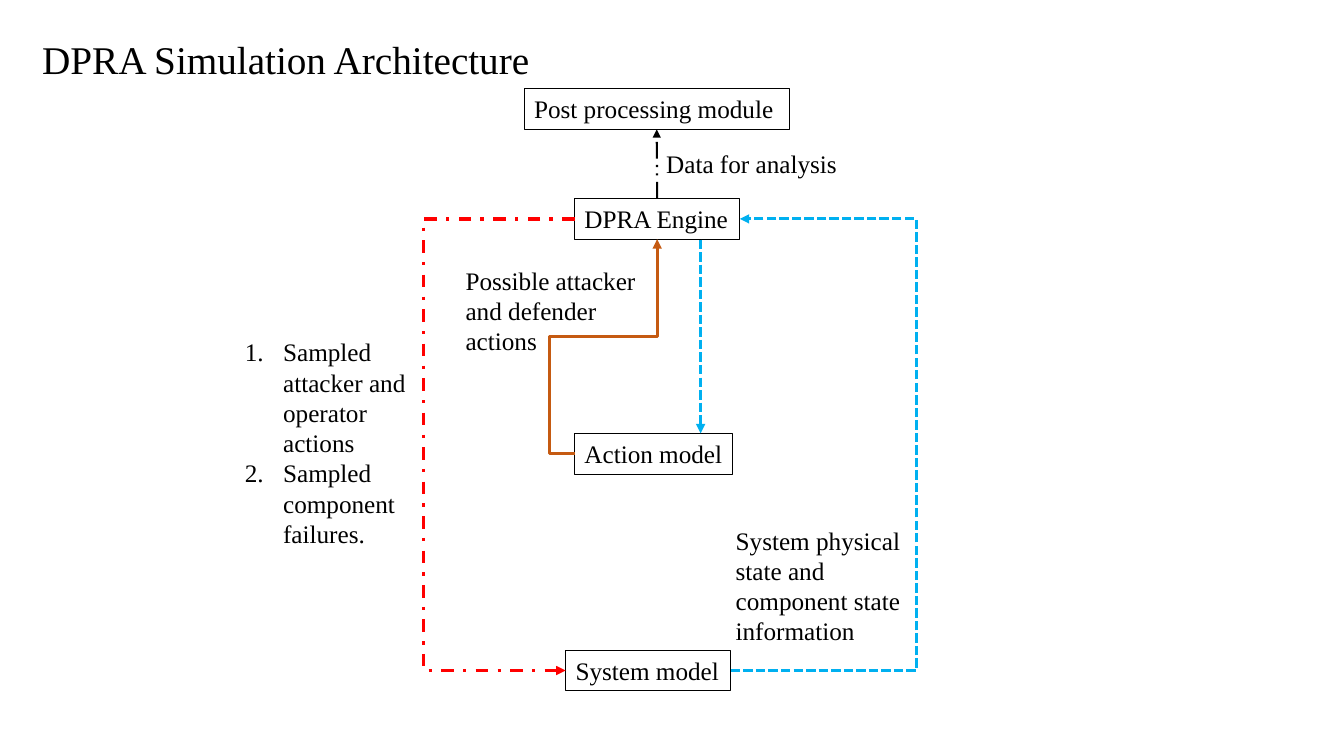
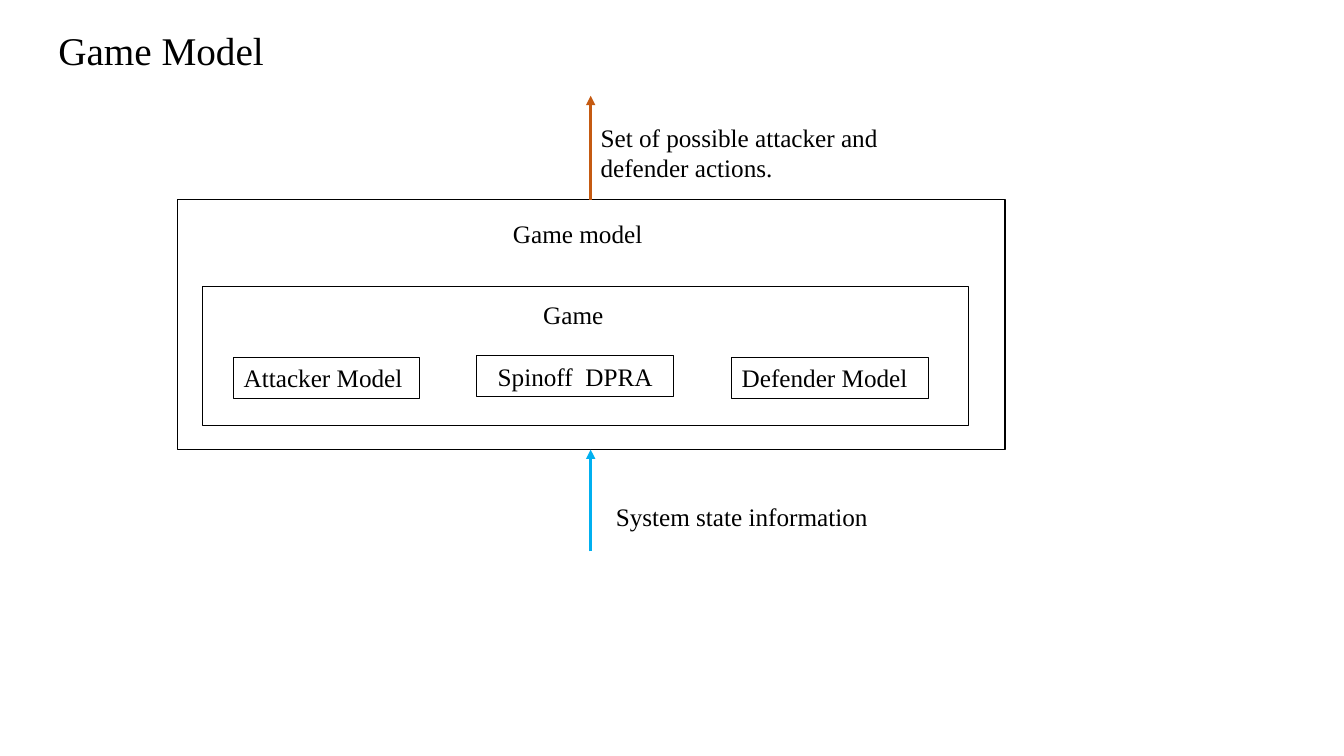
from dataclasses import dataclass
from typing import Optional

import lxml.etree
import pptx
import pptx.dml.color
import pptx.enum.dml
import pptx.enum.shapes
import pptx.enum.text
import pptx.oxml.ns
import pptx.util

Color = pptx.dml.color.RGBColor
Dash = pptx.enum.dml.MSO_LINE
Align = pptx.enum.text.PP_ALIGN
Kind = pptx.enum.shapes.MSO_CONNECTOR


# Theme and grid: 100 columns by 100 rows
@dataclass(frozen=True)
class Theme:
    font: str = "Times New Roman"
    ink: Color = Color(0x00, 0x00, 0x00)
    actions: Color = Color(0xC5, 0x5A, 0x11)
    state: Color = Color(0x00, 0xB0, 0xF0)
    samples: Color = Color(0xFF, 0x00, 0x00)
    title_size: float = 28
    body_size: float = 18
    flow_weight: float = 2.25
    box_weight: float = 0.75
    frame_weight: float = 1


THEME = Theme()
SLIDE_WIDTH = pptx.util.Inches(13.33)
SLIDE_HEIGHT = pptx.util.Inches(7.5)
LINE_ROWS = 5.38  # height of a box holding one line of text
TOP, LEFT, BOTTOM, RIGHT = range(4)  # connection sites of a rectangle


def cols(count: float) -> int:
    return round(SLIDE_WIDTH * count / 100)


def rows(count: float) -> int:
    return round(SLIDE_HEIGHT * count / 100)


# Descriptions of the repeated elements
@dataclass(frozen=True)
class Box:
    """A text area; it is outlined when it has a border weight."""
    col: float
    row: float
    width: float
    text: tuple[str, ...] = ()
    height: float = LINE_ROWS
    border: float = 0
    size: float = THEME.body_size
    wrap: bool = True
    centred: bool = False
    numbered: bool = False


@dataclass(frozen=True)
class Stroke:
    color: Color
    weight: float = THEME.flow_weight
    dash: Optional[Dash] = None


@dataclass(frozen=True)
class Arrow:
    """A straight arrow between two grid points."""
    start: tuple[float, float]
    end: tuple[float, float]
    stroke: Stroke


@dataclass(frozen=True)
class Link:
    """An arrow glued to two boxes, turning at a lane column and row."""
    source: str
    source_site: int
    target: str
    target_site: int
    stroke: Stroke
    lane_col: Optional[float] = None
    lane_row: Optional[float] = None


def title(col: float, row: float, width: float, text: str) -> Box:
    return Box(col, row, width, (text,), 7.6, size=THEME.title_size)


def module(col: float, row: float, width: float, text: str,
           wrap: bool = True, centred: bool = False) -> Box:
    return Box(col, row, width, (text,), border=THEME.box_weight,
               wrap=wrap, centred=centred)


def frame(col: float, row: float, width: float, height: float) -> Box:
    return Box(col, row, width, height=height, border=THEME.frame_weight)


# Drawing
def draw_box(page, box: Box):
    area = (cols(box.col), rows(box.row), cols(box.width), rows(box.height))
    if box.border:
        shape = page.shapes.add_shape(
            pptx.enum.shapes.MSO_SHAPE.RECTANGLE, *area)
        shape.shadow.inherit = False
        shape.fill.background()
        shape.line.color.rgb = THEME.ink
        shape.line.width = pptx.util.Pt(box.border)
    else:
        shape = page.shapes.add_textbox(*area)
    frame_text = shape.text_frame
    frame_text.word_wrap = box.wrap
    frame_text.vertical_anchor = pptx.enum.text.MSO_ANCHOR.TOP
    for index, words in enumerate(box.text):
        para = (frame_text.add_paragraph() if index
                else frame_text.paragraphs[0])
        para.alignment = Align.CENTER if box.centred else Align.LEFT
        if box.numbered:
            number_paragraph(para)
        span = para.add_run()
        span.text = words
        span.font.name = THEME.font
        span.font.size = pptx.util.Pt(box.size)
        span.font.color.rgb = THEME.ink
    return shape


def number_paragraph(para) -> None:
    properties = para._p.get_or_add_pPr()
    indent = pptx.util.Inches(0.38)
    properties.set("marL", str(indent))
    properties.set("indent", str(-indent))
    lxml.etree.SubElement(properties, pptx.oxml.ns.qn("a:buAutoNum"),
                          type="arabicPeriod")


def style_arrow(connector, stroke: Stroke) -> None:
    line = connector.line
    line.color.rgb = stroke.color
    line.width = pptx.util.Pt(stroke.weight)
    if stroke.dash is not None:
        line.dash_style = stroke.dash
    qn = pptx.oxml.ns.qn
    lxml.etree.SubElement(line._get_or_add_ln(), qn("a:tailEnd"),
                          type="triangle")
    lxml.etree.SubElement(connector._element.spPr, qn("a:effectLst"))


def draw_arrow(page, arrow: Arrow) -> None:
    (start_col, start_row), (end_col, end_row) = arrow.start, arrow.end
    connector = page.shapes.add_connector(
        Kind.STRAIGHT, cols(start_col), rows(start_row),
        cols(end_col), rows(end_row))
    style_arrow(connector, arrow.stroke)


def draw_link(page, link: Link, shapes: dict) -> None:
    kind = Kind.STRAIGHT if link.lane_col is None else Kind.ELBOW
    connector = page.shapes.add_connector(kind, 0, 0, 0, 0)
    connector.begin_connect(shapes[link.source], link.source_site)
    connector.end_connect(shapes[link.target], link.target_site)
    if link.lane_col is not None:
        set_lanes(connector, link.lane_col, link.lane_row)
    style_arrow(connector, link.stroke)


def set_lanes(connector, lane_col: float, lane_row: Optional[float]) -> None:
    """Express the turning points as shares of the connector's extent."""
    across = connector.end_x - connector.begin_x
    shares = [(cols(lane_col) - connector.begin_x) / across]
    geometry = connector._element.spPr.find(pptx.oxml.ns.qn("a:prstGeom"))
    if lane_row is not None:
        down = connector.end_y - connector.begin_y
        shares.append((rows(lane_row) - connector.begin_y) / down)
        geometry.set("prst", "bentConnector4")
    guides = geometry.find(pptx.oxml.ns.qn("a:avLst"))
    for index, share in enumerate(shares, 1):
        lxml.etree.SubElement(guides, pptx.oxml.ns.qn("a:gd"),
                              name=f"adj{index}",
                              fmla=f"val {round(share * 100000)}")


def add_page(deck):
    return deck.slides.add_slide(deck.slide_layouts[6])


# Slide 1: modules and the flows between them
STATE_FLOW = Stroke(THEME.state, dash=Dash.SQUARE_DOT)

MODULES = {
    "engine": module(42.75, 26.27, 12.3, "DPRA Engine", wrap=False),
    "action": module(42.75, 57.33, 11.78, "Action model", wrap=False),
    "system": module(42.08, 86, 12.3, "System model", wrap=False),
    "post": module(39, 11.73, 19.73, "Post processing module"),
}
ARCHITECTURE_TEXTS = (
    title(2.4, 4, 38.1, "DPRA Simulation Architecture"),
    Box(54, 68.8, 14.48,
        ("System physical state and component state information",), 17.47),
    Box(17.48, 43.87, 14.4,
        ("Sampled attacker and operator actions",
         "Sampled component failures."), 29.6, numbered=True),
    Box(33.9, 34.4, 14.4,
        ("Possible attacker and defender actions",), 13.47),
    Box(48.83, 18.93, 15.45, ("Data for analysis",)),
)
LINKS = (
    Link("action", LEFT, "engine", BOTTOM, Stroke(THEME.actions),
         40.88, 44.53),
    Link("system", RIGHT, "engine", RIGHT, STATE_FLOW, 68.18),
    Link("engine", LEFT, "system", LEFT,
         Stroke(THEME.samples, dash=Dash.DASH_DOT), 31.5),
    Link("engine", TOP, "post", BOTTOM,
         Stroke(THEME.ink, 1.5, Dash.DASH_DOT_DOT)),
)
STATE_ARROW = Arrow((52.13, 31.7), (52.13, 57.33), STATE_FLOW)


def build_architecture(deck) -> None:
    page = add_page(deck)
    shapes = {name: draw_box(page, box) for name, box in MODULES.items()}
    for box in ARCHITECTURE_TEXTS:
        draw_box(page, box)
    for link in LINKS:
        draw_link(page, link, shapes)
    draw_arrow(page, STATE_ARROW)


# Slide 2: the game model, its parts, its input and its output
GAME_BOXES = (
    title(3.6, 2.8, 31.35, "Game Model"),
    frame(13.2, 26.4, 61.58, 33.07),
    Box(37.43, 28.27, 12.3, ("Game model",)),
    frame(15.08, 37.87, 57, 18.4),
    Box(39.68, 38.93, 6.08, ("Game",)),
    module(17.4, 47.33, 13.8, "Attacker Model"),
    module(35.48, 47.07, 14.63, "Spinoff  DPRA", centred=True),
    module(54.45, 47.33, 14.63, "Defender Model"),
    Box(45.08, 65.6, 20.48, ("System state information",), wrap=False),
    Box(43.95, 15.47, 28.2,
        ("Set of possible attacker and defender actions.",), 9.47),
)
GAME_ARROWS = (
    Arrow((43.95, 72.93), (43.95, 59.47), Stroke(THEME.state)),
    Arrow((43.95, 26.4), (43.95, 12.67), Stroke(THEME.actions)),
)


def build_game(deck) -> None:
    page = add_page(deck)
    for box in GAME_BOXES:
        draw_box(page, box)
    for arrow in GAME_ARROWS:
        draw_arrow(page, arrow)


def main() -> None:
    deck = pptx.Presentation()
    deck.slide_width = SLIDE_WIDTH
    deck.slide_height = SLIDE_HEIGHT
    build_architecture(deck)
    build_game(deck)
    deck.save("out.pptx")


if __name__ == "__main__":
    main()
